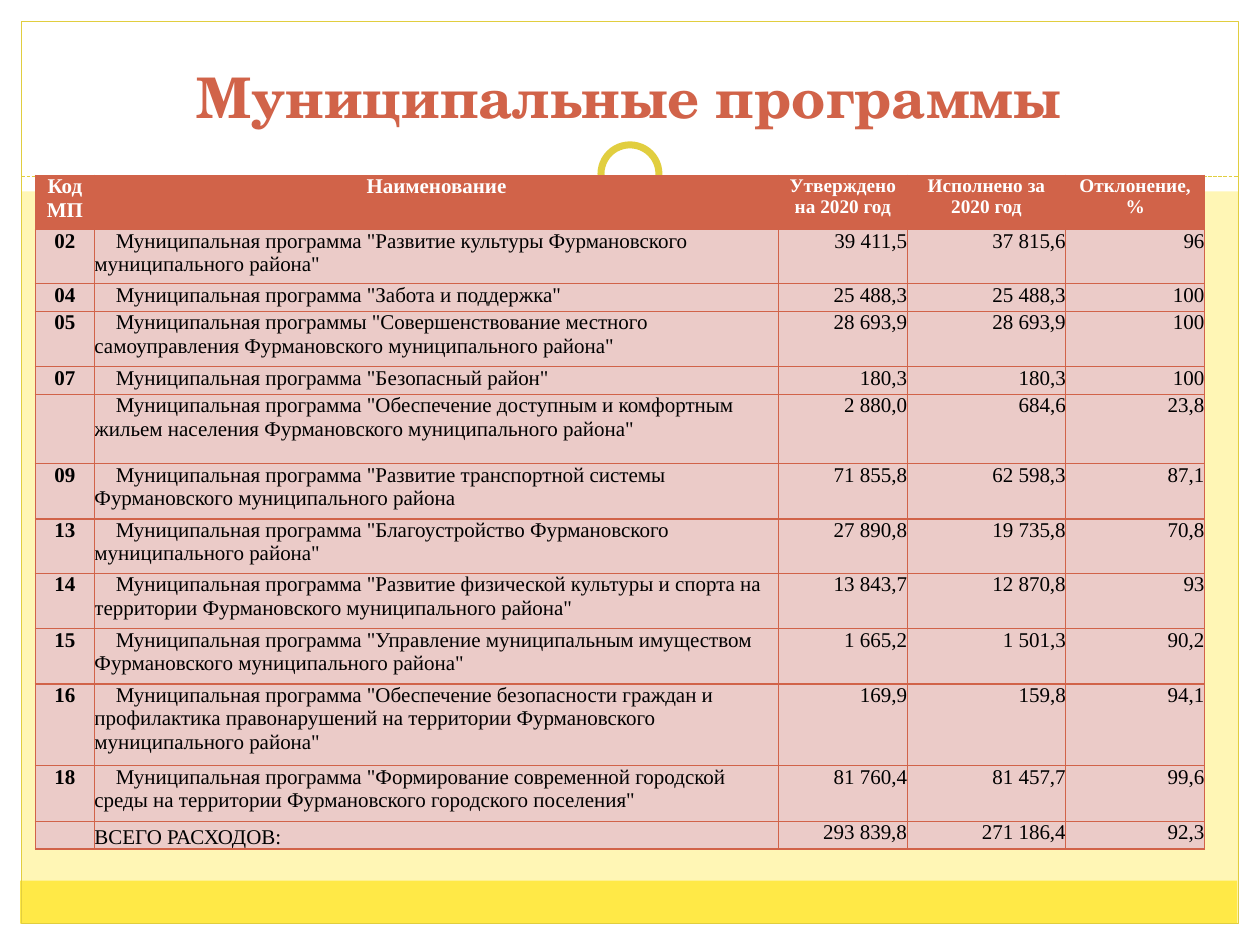
from lxml import etree
from pptx import Presentation
from pptx.dml.color import RGBColor
from pptx.enum.dml import MSO_LINE
from pptx.enum.shapes import MSO_CONNECTOR, MSO_SHAPE
from pptx.enum.text import MSO_ANCHOR, PP_ALIGN
from pptx.oxml.ns import qn
from pptx.util import Inches, Pt

RECTANGLE, OVAL = MSO_SHAPE.RECTANGLE, MSO_SHAPE.OVAL
LEFT, CENTER, RIGHT = PP_ALIGN.LEFT, PP_ALIGN.CENTER, PP_ALIGN.RIGHT
BOTTOM = MSO_ANCHOR.BOTTOM
DASH = MSO_LINE.SQUARE_DOT
COLORS = {
    "cream": "FFF6B5", "white": "FFFFFF", "yellow": "FFE947", "gold": "E1CE3F",
    "brick": "D16349", "pink": "EBCBC8", "black": "000000",
}
SERIF = "Times New Roman"


def color(name):
    return RGBColor.from_string(COLORS[name])


def add_decor(kind, box, fill=None, line=None, width=0.75):
    decor = slide.shapes.add_shape(kind, *[Inches(v) for v in box])
    decor.shadow.inherit = False
    if fill:
        decor.fill.solid()
        decor.fill.fore_color.rgb = color(fill)
    else:
        decor.fill.background()
    if line:
        decor.line.color.rgb = color(line)
        decor.line.width = Pt(width)
    else:
        decor.line.fill.background()


prs = Presentation()
prs.slide_width, prs.slide_height = Inches(10), Inches(7.5)
slide = prs.slides.add_slide(prs.slide_layouts[5])
slide.background.fill.solid()
slide.background.fill.fore_color.rgb = color("cream")

for margin in [(0, 7.33, 10, 0.17), (0, 0, 10, 1.52), (0, 0, 0.17, 7.5), (9.83, 0, 0.17, 7.5)]:
    add_decor(RECTANGLE, margin, "white")
add_decor(RECTANGLE, (0.16, 6.99, 9.66, 0.34), "yellow")
add_decor(RECTANGLE, (0.17, 0.17, 9.66, 7.16), line="gold")

divider = slide.shapes.add_connector(
    MSO_CONNECTOR.STRAIGHT, Inches(0.17), Inches(1.4), Inches(9.83), Inches(1.4))
divider.line.color.rgb = color("gold")
divider.line.width = Pt(0.75)
divider.line.dash_style = DASH
etree.SubElement(divider._element.spPr, qn("a:effectLst"))

add_decor(OVAL, (4.67, 1.05, 0.67, 0.67), "white")
add_decor(OVAL, (4.77, 1.15, 0.46, 0.46), "white", "gold", 4)

title = slide.shapes.title
slide.shapes._spTree.append(title._element)
title.left, title.top, title.width, title.height = [Inches(v) for v in (0.33, 0.25, 9.33, 0.83)]
title.text_frame.text = "Муниципальные программы"
title.text_frame.vertical_anchor = BOTTOM
heading = title.text_frame.paragraphs[0]
heading.alignment = CENTER
heading.font.name = "TeX Gyre Schola"
heading.font.size = Pt(32)
heading.font.bold = True
heading.font.color.rgb = color("brick")

rows = [
    ("Код МП", "Наименование", "Утверждено на 2020 год", "Исполнено за 2020 год", "Отклонение, %"),
    ("02", 'Муниципальная программа "Развитие культуры Фурмановского муниципального района"',
     "39 411,5", "37 815,6", "96"),
    ("04", 'Муниципальная программа "Забота и поддержка"', "25 488,3", "25 488,3", "100"),
    ("05", 'Муниципальная программы "Совершенствование местного самоуправления '
     'Фурмановского муниципального района"', "28 693,9", "28 693,9", "100"),
    ("07", 'Муниципальная программа "Безопасный район"', "180,3", "180,3", "100"),
    ("", 'Муниципальная программа "Обеспечение доступным и комфортным жильем населения '
     'Фурмановского муниципального района"', "2 880,0", "684,6", "23,8"),
    ("09", 'Муниципальная программа "Развитие транспортной системы Фурмановского '
     'муниципального района', "71 855,8", "62 598,3", "87,1"),
    ("13", 'Муниципальная программа "Благоустройство Фурмановского муниципального района"',
     "27 890,8", "19 735,8", "70,8"),
    ("14", 'Муниципальная программа "Развитие физической культуры и спорта на территории '
     'Фурмановского муниципального района"', "13 843,7", "12 870,8", "93"),
    ("15", 'Муниципальная программа "Управление муниципальным имуществом Фурмановского '
     'муниципального района"', "1 665,2", "1 501,3", "90,2"),
    ("16", 'Муниципальная программа "Обеспечение безопасности граждан и профилактика '
     'правонарушений на территории Фурмановского муниципального района"',
     "169,9", "159,8", "94,1"),
    ("18", 'Муниципальная программа "Формирование современной городской среды на территории '
     'Фурмановского городского поселения"', "81 760,4", "81 457,7", "99,6"),
    ("", "ВСЕГО РАСХОДОВ:", "293 839,8", "271 186,4", "92,3"),
]
column_widths = [0.47, 5.43, 1.02, 1.26, 1.1]
row_heights = [0.43, 0.43, 0.22, 0.44, 0.22, 0.55, 0.44, 0.43, 0.44, 0.44, 0.65, 0.44, 0.22]
alignments = [CENTER, LEFT, RIGHT, RIGHT, RIGHT]
last_row = len(rows) - 1

programs = slide.shapes.add_table(
    len(rows), len(column_widths), Inches(0.28), Inches(1.39), Inches(9.29), Inches(5.35)).table
programs.horz_banding = False
for column, width in zip(programs.columns, column_widths):
    column.width = Inches(width)
for row, height in zip(programs.rows, row_heights):
    row.height = Inches(height)

for r, values in enumerate(rows):
    header = r == 0
    for c, value in enumerate(values):
        cell = programs.cell(r, c)
        cell.margin_left = cell.margin_right = Inches(0.07 if header else 0)
        cell.margin_top = cell.margin_bottom = 0
        for side in ("lnL", "lnR", "lnT", "lnB"):
            border = etree.SubElement(cell._tc.get_or_add_tcPr(), qn(f"a:{side}"), w=str(Pt(0.75)))
            stroke = etree.SubElement(border, qn("a:solidFill"))
            etree.SubElement(stroke, qn("a:srgbClr"), val=COLORS["brick"])
        cell.fill.solid()
        cell.fill.fore_color.rgb = color("brick" if header else "pink")

        cell.text_frame.text = value
        entry = cell.text_frame.paragraphs[0]
        if not value:
            etree.SubElement(entry._p, qn("a:endParaRPr"), sz="1200")
            continue
        entry.alignment = CENTER if header else alignments[c]
        entry.font.name = SERIF
        entry.font.size = Pt(11 if header and c > 1 else 12)
        entry.font.bold = header or c == 0
        entry.font.color.rgb = color("white" if header else "black")
        if c == 1 and r == last_row:
            cell.vertical_anchor = BOTTOM
        elif c == 1 and not header:
            entry._p.get_or_add_pPr().set("indent", str(Inches(0.17)))

prs.save("out.pptx")
